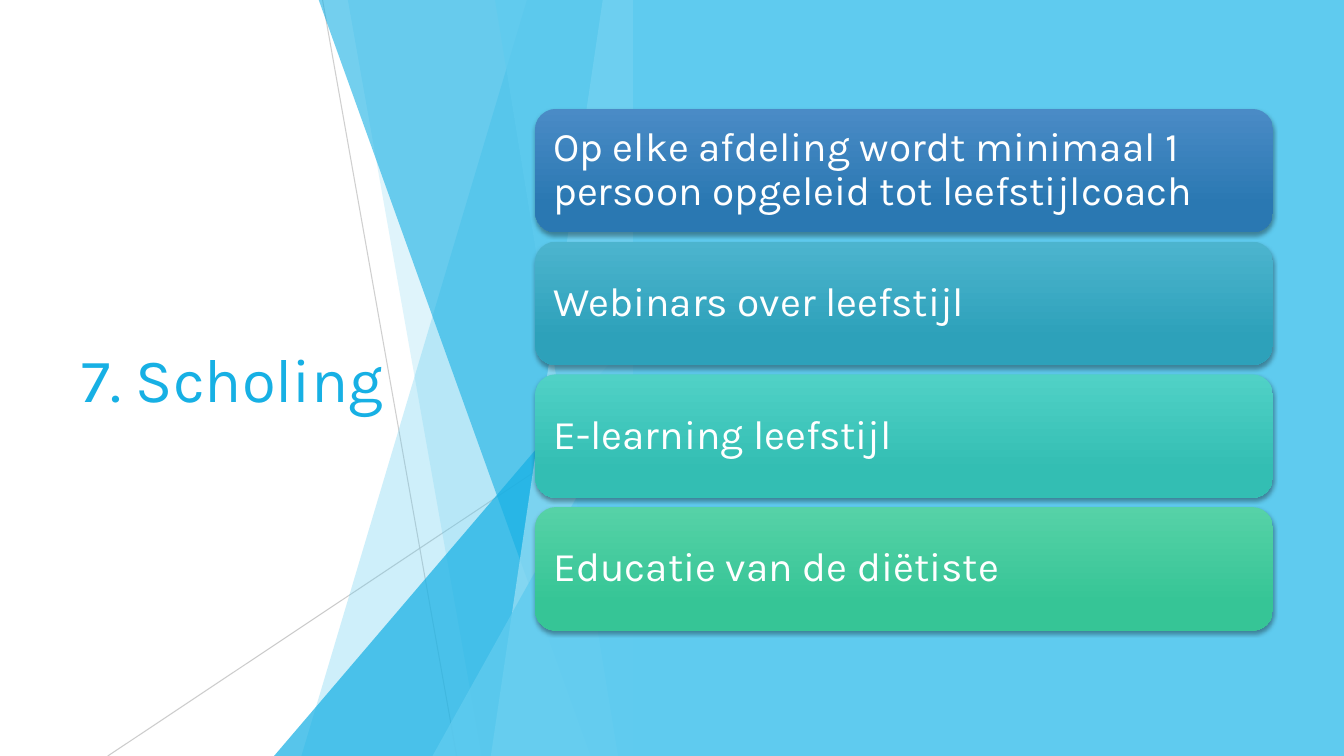
from lxml.etree import SubElement
from pptx import Presentation
from pptx.dml.color import RGBColor
from pptx.enum.shapes import MSO_CONNECTOR, MSO_SHAPE
from pptx.enum.text import MSO_ANCHOR, PP_ALIGN
from pptx.oxml.ns import qn
from pptx.util import Pt

COLORS = {
    "sky": "5FCBEF", "blue": "17B0E4", "pale": "9FE0F5",
    "gray": "BFBFBF", "white": "FFFFFF", "black": "000000",
}
FONT = "Karla"
WIDTH, HEIGHT = 960, 540
PANEL_LEFT = 452.16


def set_alpha(shape, percent):
    color = shape.element.xpath(".//a:solidFill/a:srgbClr")[0]
    SubElement(color, qn("a:alpha"), val=str(percent * 1000))


def fill_plain(shape, color):
    shape.fill.solid()
    shape.fill.fore_color.rgb = RGBColor.from_string(COLORS[color])
    shape.line.fill.background()
    shape.shadow.inherit = False


presentation = Presentation()
presentation.slide_width = Pt(WIDTH)
presentation.slide_height = Pt(HEIGHT)
slide = presentation.slides.add_slide(presentation.slide_layouts[5])
shapes = slide.shapes

thin_lines = [(230.4, 0, 326.2, HEIGHT, 75), (PANEL_LEFT, 290.2, 77, HEIGHT, 80)]
for start_x, start_y, end_x, end_y, alpha in thin_lines:
    line = shapes.add_connector(
        MSO_CONNECTOR.STRAIGHT, Pt(start_x), Pt(start_y), Pt(end_x), Pt(end_y))
    line.line.color.rgb = RGBColor.from_string(COLORS["gray"])
    line.line.width = Pt(0.75)
    set_alpha(line, alpha)
    SubElement(line.element.spPr, qn("a:effectLst"))

facets = [
    ("band", 376.6, 215.3, "sky", 30),
    ("band", 248.4, 344.2, "sky", 20),
    ("triangle", 195.8, 239.8, "blue", 72),
    ("band", 227.5, 421.9, "blue", 60),
    ("band", 430.6, 350.6, "pale", 70),
    ("band", 353.5, 441.4, "sky", 65),
    ("triangle", 308.9, 283, "sky", 80),
]
for kind, first, second, color, alpha in facets:
    if kind == "band":
        top_x, bottom_x = first, second
        builder = shapes.build_freeform(Pt(top_x), Pt(-0.5))
        corners = [(PANEL_LEFT, -0.5), (PANEL_LEFT, HEIGHT), (bottom_x, HEIGHT)]
        builder.add_line_segments([(Pt(x), Pt(y)) for x, y in corners], close=True)
        facet = builder.convert_to_shape()
    else:
        left, top = first, second
        facet = shapes.add_shape(
            MSO_SHAPE.ISOSCELES_TRIANGLE, Pt(left), Pt(top),
            Pt(PANEL_LEFT - left), Pt(HEIGHT - top))
        facet.adjustments[0] = 1
    fill_plain(facet, color)
    set_alpha(facet, alpha)

title = shapes.title
title.left, title.top, title.width, title.height = Pt(51), Pt(108.7), Pt(279.4), Pt(322.6)
title.text_frame.text = "7. Scholing"
title.text_frame.word_wrap = True
title.text_frame.vertical_anchor = MSO_ANCHOR.MIDDLE
paragraph = title.text_frame.paragraphs[0]
paragraph.alignment = PP_ALIGN.LEFT
paragraph.font.name = FONT
paragraph.font.size = Pt(44)
paragraph.font.color.rgb = RGBColor.from_string(COLORS["blue"])
facet.element.addnext(title.element)

panel = shapes.add_shape(
    MSO_SHAPE.RECTANGLE, Pt(PANEL_LEFT), 0, Pt(WIDTH - PANEL_LEFT), Pt(HEIGHT))
fill_plain(panel, "sky")

cards = [
    ("Op elke afdeling wordt minimaal 1 persoon opgeleid tot leefstijlcoach", "4A8BC6", "2A78B2"),
    ("Webinars over leefstijl", "4CB4CE", "2DA1BA"),
    ("E-learning leefstijl", "50D1C6", "33BEB3"),
    ("Educatie van de diëtiste", "56D2A7", "36C596"),
]
for index, (text, light, dark) in enumerate(cards):
    card = shapes.add_shape(
        MSO_SHAPE.ROUNDED_RECTANGLE, Pt(382.3), Pt(77.8 + index * 94.8), Pt(527), Pt(88.2))
    card.fill.gradient()
    card.fill.gradient_angle = 270
    for stop, position, color in zip(card.fill.gradient_stops, (0, 0.78), (light, dark)):
        stop.position = position
        stop.color.rgb = RGBColor.from_string(color)
    card.line.fill.background()

    card.shadow.inherit = False
    effects = card.element.spPr.find(qn("a:effectLst"))
    shadow = SubElement(
        effects, qn("a:outerShdw"), blurRad=str(Pt(3)), dist=str(Pt(2)),
        dir="5400000", algn="ctr", rotWithShape="0")
    shadow_color = SubElement(shadow, qn("a:srgbClr"), val=COLORS["black"])
    SubElement(shadow_color, qn("a:alpha"), val="35000")

    frame = card.text_frame
    frame.text = text
    frame.word_wrap = True
    frame.vertical_anchor = MSO_ANCHOR.MIDDLE
    frame.margin_left = frame.margin_right = Pt(8.7)
    frame.margin_top = frame.margin_bottom = Pt(8.7)
    paragraph = frame.paragraphs[0]
    paragraph.alignment = PP_ALIGN.LEFT
    paragraph.line_spacing = 0.9
    paragraph.font.name = FONT
    paragraph.font.size = Pt(29)
    paragraph.font.color.rgb = RGBColor.from_string(COLORS["white"])

presentation.save("out.pptx")
